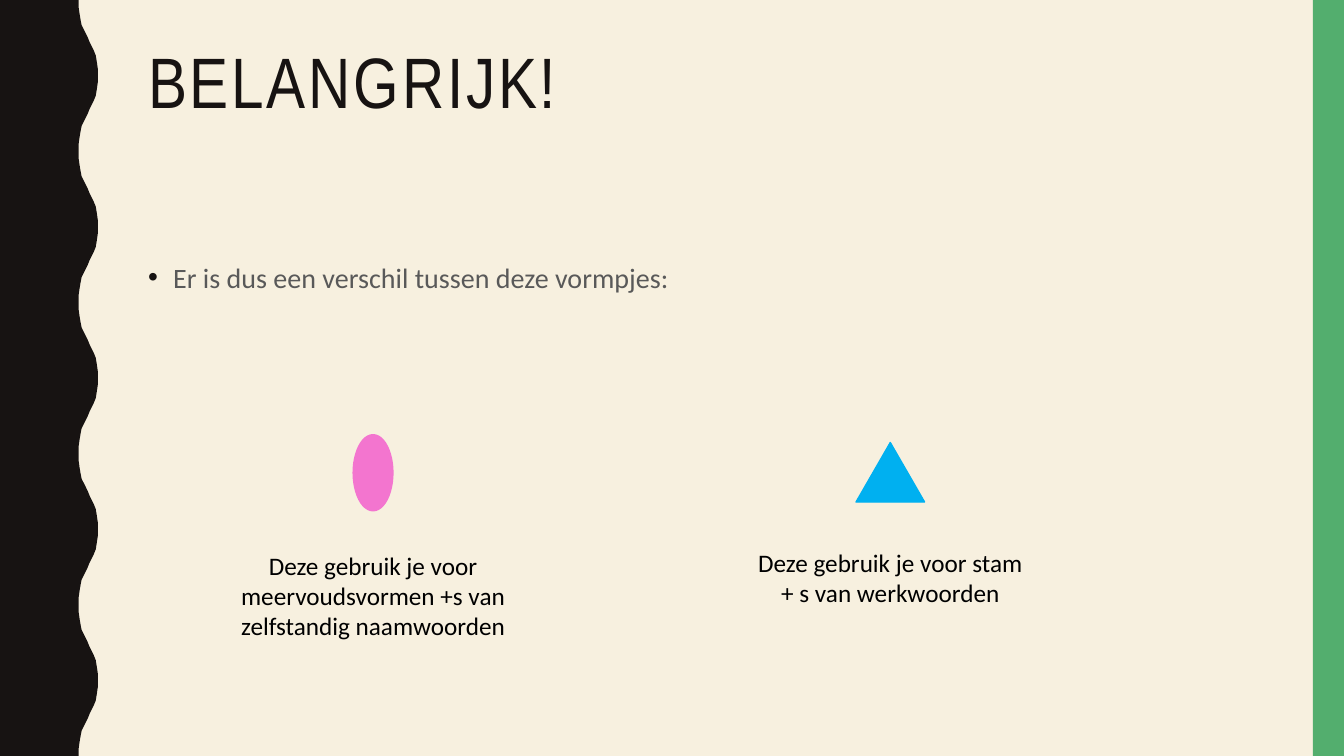
from lxml import etree
from pptx import Presentation, util as u
from pptx.dml.color import RGBColor
from pptx.enum import shapes, text
from pptx.oxml.ns import qn

W, H = 13.33, 7.5
COLORS = {"paper": "F7F0DF", "ink": "171312", "green": "53AE6E", "gray": "595959",
          "black": "000000", "pink": "F375CF", "blue": "00B0F0"}

# Content: box, wording, format
TITLE = ((1.37, 0.42, 11.13, 1.63), "BELANGRIJK!",
         {"size": u.Pt(51), "name": "Arial Narrow"}, "ink")
BODY = ((1.37, 2.5, 11.13, 3.93), "Er is dus een verschil tussen deze vormpjes:",
        {"size": u.Pt(20), "name": "Calibri"}, "gray")
CAPTION = {"size": u.Pt(18), "name": "Calibri"}
CAPTION_W = 2.92
# Symbol, colour, line width, width, height, top; caption left, top, height, wording
SYMBOLS = [
    (shapes.MSO_SHAPE.OVAL, "pink", 2, 0.38, 0.74, 4.32,
     2.24, 5.41, 1.01, "Deze gebruik je voor meervoudsvormen +s van zelfstandig naamwoorden"),
    (shapes.MSO_SHAPE.ISOSCELES_TRIANGLE, "blue", 1, 0.68, 0.59, 4.39,
     7.37, 5.38, 0.71, "Deze gebruik je voor stam + s van werkwoorden"),
]
# Half a wave, as (x, y) in hundredths of an inch; the other half mirrors it
HALF_WAVE = [(78, 0), (78, 7), (79, 14), (80, 20), (81, 25), (83, 29), (85, 33), (87, 37),
             (89, 42), (91, 46), (93, 50), (95, 55), (96, 61), (97, 68), (97, 75)]
WAVE, WAVES = 150, 5

prs = Presentation()
prs.slide_width, prs.slide_height = u.Inches(W), u.Inches(H)
s = prs.slides.add_slide(prs.slide_layouts[6])


def rgb(name):
    return RGBColor.from_string(COLORS[name])


def paint(sp, color, line=None):
    sp.shadow.inherit = False
    sp.fill.solid()
    sp.fill.fore_color.rgb = rgb(color)
    if line:
        sp.line.color.rgb = rgb(color)
        sp.line.width = u.Pt(line)
    else:
        sp.line.fill.background()


def add_shape(kind, box, color, line=None):
    sp = s.shapes.add_shape(kind, *map(u.Inches, box))
    paint(sp, color, line)


def add_text(box, words, font, color, **para):
    tf = s.shapes.add_textbox(*map(u.Inches, box)).text_frame
    tf.word_wrap = True
    tf.vertical_anchor = text.MSO_ANCHOR.TOP
    p = tf.paragraphs[0]
    r = p.add_run()
    r.text = words
    for target, values in ((r.font, font), (p, para)):
        for key, value in values.items():
            setattr(target, key, value)
    r.font.color.rgb = rgb(color)
    return p, r


# Background, wavy left edge and right bar
s.background.fill.solid()
s.background.fill.fore_color.rgb = rgb("paper")
wave = HALF_WAVE + [(x, WAVE - y) for x, y in HALF_WAVE[-2::-1]]
edge = [(x, y + i * WAVE) for i in range(WAVES) for x, y in wave]
fb = s.shapes.build_freeform(0, 0, scale=u.Inches(0.01))
fb.add_line_segments(edge + [(0, WAVE * WAVES)], close=True)
paint(fb.convert_to_shape(), "ink")
add_shape(shapes.MSO_SHAPE.RECTANGLE, (W - 0.31, 0, 0.31, H), "green")

# Title with wide letter spacing
p, r = add_text(*TITLE, line_spacing=0.9)
r.font._element.set("spc", "200")

# Bulleted sentence
p, r = add_text(*BODY, line_spacing=1.1, space_before=u.Pt(7))
pPr = p._p.get_or_add_pPr()
pPr.set("marL", str(u.Inches(0.25)))
pPr.set("indent", str(-u.Inches(0.25)))
bullet_color = etree.SubElement(pPr, qn("a:buClr"))
etree.SubElement(bullet_color, qn("a:srgbClr"), val=COLORS["ink"])
etree.SubElement(pPr, qn("a:buFont"), typeface="Arial")
etree.SubElement(pPr, qn("a:buChar"), char="•")

# Symbols, each centred above its caption
for kind, color, line, w, h, top, left, cap_top, cap_h, words in SYMBOLS:
    add_shape(kind, (left + (CAPTION_W - w) / 2, top, w, h), color, line)
    add_text((left, cap_top, CAPTION_W, cap_h), words, CAPTION, "black",
             alignment=text.PP_ALIGN.CENTER)

prs.save("out.pptx")
